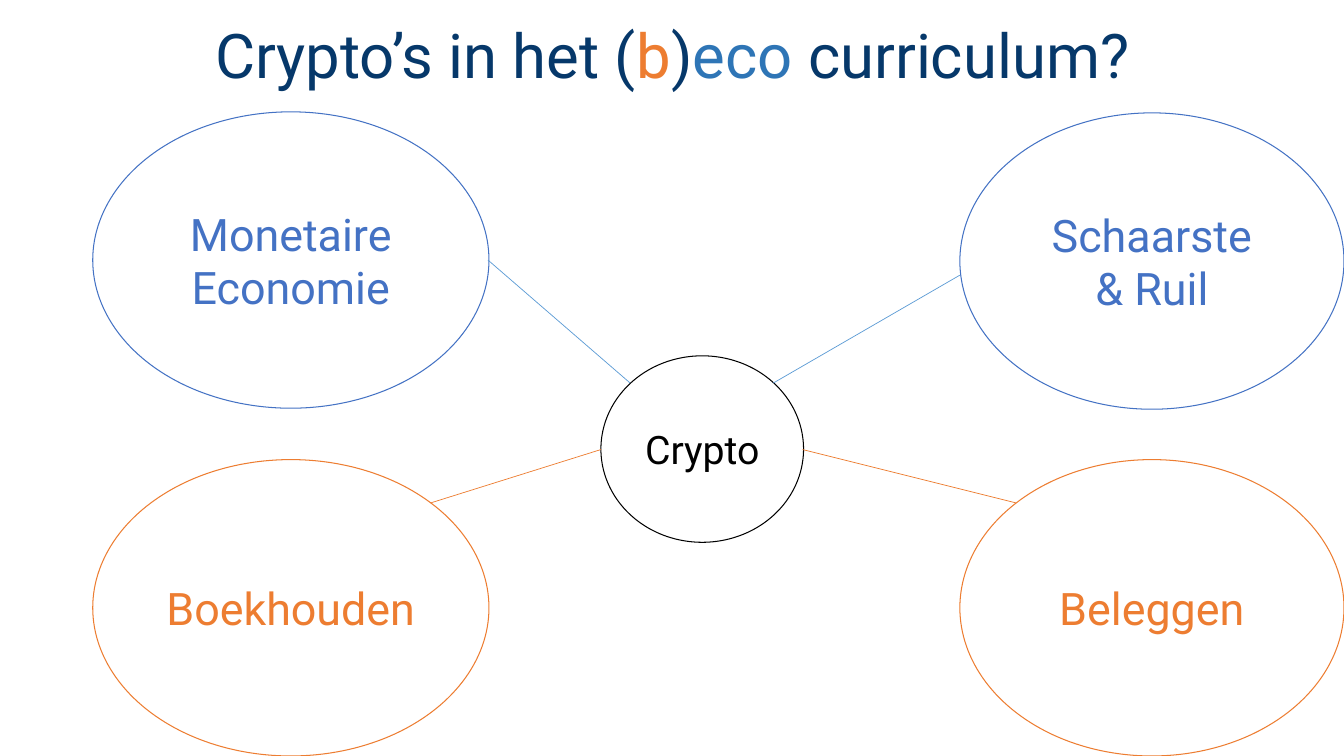
from lxml import etree
from pptx import Presentation, util as u
from pptx.dml.color import RGBColor
from pptx.enum import shapes, text
from pptx.oxml import ns

PX = 9144  # EMU per px, 100 px to the inch
FONT = "Roboto"
COLORS = {
    "navy": "06386A",
    "blue": "4472C4",
    "deep_blue": "2E75B6",
    "light_blue": "5B9BD5",
    "orange": "ED7D31",
    "black": "000000",
}


def px(*lengths):
    return [u.Emu(length * PX) for length in lengths]


def color(name):
    return RGBColor.from_string(COLORS[name])


def write_text(shape, paragraphs, size, line_spacing=None):
    """Fill a shape with centred paragraphs, each a list of (words, colour) runs."""
    frame = shape.text_frame
    frame.word_wrap = True
    frame.vertical_anchor = text.MSO_ANCHOR.MIDDLE
    for index, runs in enumerate(paragraphs):
        paragraph = frame.add_paragraph() if index else frame.paragraphs[0]
        paragraph.alignment = text.PP_ALIGN.CENTER
        paragraph.line_spacing = line_spacing
        for words, name in runs:
            run = paragraph.add_run()
            run.text = words
            run.font.name = FONT
            run.font.size = u.Pt(size)
            run.font.color.rgb = color(name)


def add_title(slide, box, runs):
    title = slide.shapes.add_textbox(*px(*box))
    write_text(title, [runs], size=44, line_spacing=0.9)


def add_bubble(slide, box, lines, name, size=32):
    bubble = slide.shapes.add_shape(shapes.MSO_SHAPE.OVAL, *px(*box))
    bubble.shadow.inherit = False
    bubble.fill.background()
    bubble.line.color.rgb = color(name)
    bubble.line.width = u.Pt(0.75)
    write_text(bubble, [[(line, name)] for line in lines], size)


def add_link(slide, start, end, name):
    link = slide.shapes.add_connector(
        shapes.MSO_CONNECTOR.STRAIGHT, *px(*start, *end))
    link.line.color.rgb = color(name)
    link.line.width = u.Pt(0.5)
    etree.SubElement(link._element.spPr, ns.qn("a:effectLst"))


def main():
    presentation = Presentation()
    presentation.slide_width = u.Inches(13.33)
    presentation.slide_height = u.Inches(7.5)
    slide = presentation.slides.add_slide(presentation.slide_layouts[6])

    # Title
    add_title(slide, (92, -14, 1150, 145), [
        ("Crypto’s in het (", "navy"),
        ("b", "orange"),
        (")", "navy"),
        ("eco", "deep_blue"),
        (" curriculum?", "navy"),
    ])

    # Central topic
    add_bubble(slide, (596, 353, 201, 185), ["Crypto"], "black", size=28)

    # Curriculum themes: economics above, business economics below
    left, left_width = 92, 393
    right, right_width = 952, 381
    height, lower_top = 294, 456
    add_bubble(slide, (left, 111, left_width, height),
               ["Monetaire Economie"], "blue")
    add_bubble(slide, (right, 112, right_width, height),
               ["Schaarste", "& Ruil"], "blue")
    add_bubble(slide, (right, lower_top, right_width, height),
               ["Beleggen"], "orange")
    add_bubble(slide, (left, lower_top, left_width, height),
               ["Boekhouden"], "orange")

    # Links between the topic and its themes
    for start, end, name in [
        ((484, 258), (625, 380), "light_blue"),
        ((767, 380), (952, 273), "light_blue"),
        ((796, 446), (1008, 499), "orange"),
        ((427, 499), (596, 446), "orange"),
    ]:
        add_link(slide, start, end, name)

    presentation.save("out.pptx")


if __name__ == "__main__":
    main()
